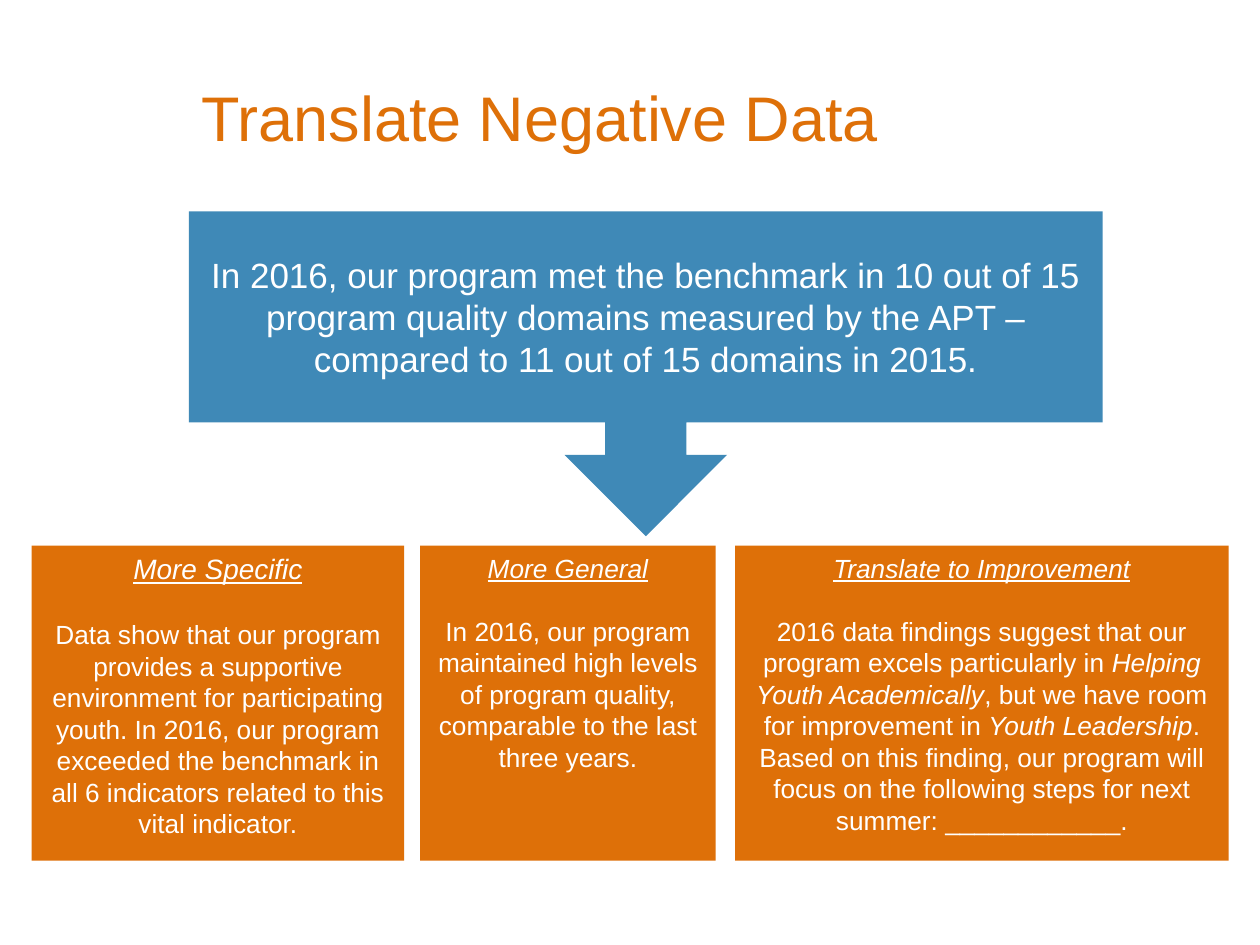
import pptx
import pptx.util
import pptx.dml.color
import pptx.enum.shapes
import pptx.enum.text
from pptx.util import Cm, Pt

ORANGE, BLUE, WHITE = "DE7008", "3F89B7", "FFFFFF"
FONT = "Arial"
TITLE = "Translate Negative Data"
FINDING = ("In 2016, our program met the benchmark in 10 out of 15 program quality domains "
           "measured by the APT – compared to 11 out of 15 domains in 2015.")
CARD_TOP, CARD_HEIGHT = 11, 6.35
CARDS = [
    {"left": 0.64, "width": 7.51, "heading": "More Specific", "size": 16, "gap": 19,
     "body": [("Data show that our program provides a supportive environment for "
               "participating youth. In 2016, our program exceeded the benchmark in all 6 "
               "indicators related to this vital indicator.", False)]},
    {"left": 8.47, "width": 5.96, "heading": "More General", "size": 15, "gap": 18,
     "body": [("In 2016, our program maintained high levels of program quality, comparable "
               "to the last three years.", False)]},
    {"left": 14.82, "width": 9.95, "heading": "Translate to Improvement", "size": 15, "gap": 18,
     "body": [("2016 data findings suggest that our program excels particularly in ", False),
              ("Helping Youth Academically", True),
              (", but we have room for improvement in ", False),
              ("Youth Leadership", True),
              (". Based on this finding, our program will focus on the following steps for "
               "next summer: ____________.", False)]},
]


def color(value):
    return pptx.dml.color.RGBColor.from_string(value)


def style(paragraph, size, fill=WHITE, alignment=pptx.enum.text.PP_ALIGN.CENTER):
    paragraph.alignment = alignment
    paragraph.font.name = FONT
    paragraph.font.size = Pt(size)
    paragraph.font.color.rgb = color(fill)


def add_panel(slide, kind, left, top, width, height, fill, anchor):
    shape = slide.shapes.add_shape(kind, Cm(left), Cm(top), Cm(width), Cm(height))
    shape.shadow.inherit = False
    shape.fill.solid()
    shape.fill.fore_color.rgb = color(fill)
    shape.line.fill.background()
    shape.text_frame.word_wrap = True
    shape.text_frame.vertical_anchor = anchor
    return shape.text_frame


def add_card(slide, card):
    frame = add_panel(slide, pptx.enum.shapes.MSO_SHAPE.RECTANGLE, card["left"], CARD_TOP,
                      card["width"], CARD_HEIGHT, ORANGE, pptx.enum.text.MSO_ANCHOR.TOP)
    heading = frame.paragraphs[0]
    heading.text = card["heading"]
    style(heading, card["size"])
    heading.font.italic = True
    heading.font.underline = True
    body = frame.add_paragraph()
    style(body, 15)
    body.space_before = Pt(card["gap"])
    for text, italic in card["body"]:
        run = body.add_run()
        run.text = text
        if italic:
            run.font.italic = True


def main():
    presentation = pptx.Presentation()
    presentation.slide_width, presentation.slide_height = Cm(25.4), Cm(19.05)
    slide = presentation.slides.add_slide(presentation.slide_layouts[5])

    title = slide.shapes.title
    title.left, title.top, title.width, title.height = Cm(1.27), Cm(0.76), Cm(22.86), Cm(3.18)
    title.text_frame.text = TITLE
    title.text_frame.margin_left = Cm(2.79)
    title.text_frame.vertical_anchor = pptx.enum.text.MSO_ANCHOR.MIDDLE
    style(title.text_frame.paragraphs[0], 36, ORANGE, pptx.enum.text.PP_ALIGN.LEFT)

    callout = add_panel(slide, pptx.enum.shapes.MSO_SHAPE.DOWN_ARROW_CALLOUT,
                        3.81, 4.26, 18.42, 6.55, BLUE, pptx.enum.text.MSO_ANCHOR.MIDDLE)
    callout.text = FINDING
    style(callout.paragraphs[0], 20)

    for card in CARDS:
        add_card(slide, card)
    presentation.save("out.pptx")


if __name__ == "__main__":
    main()
